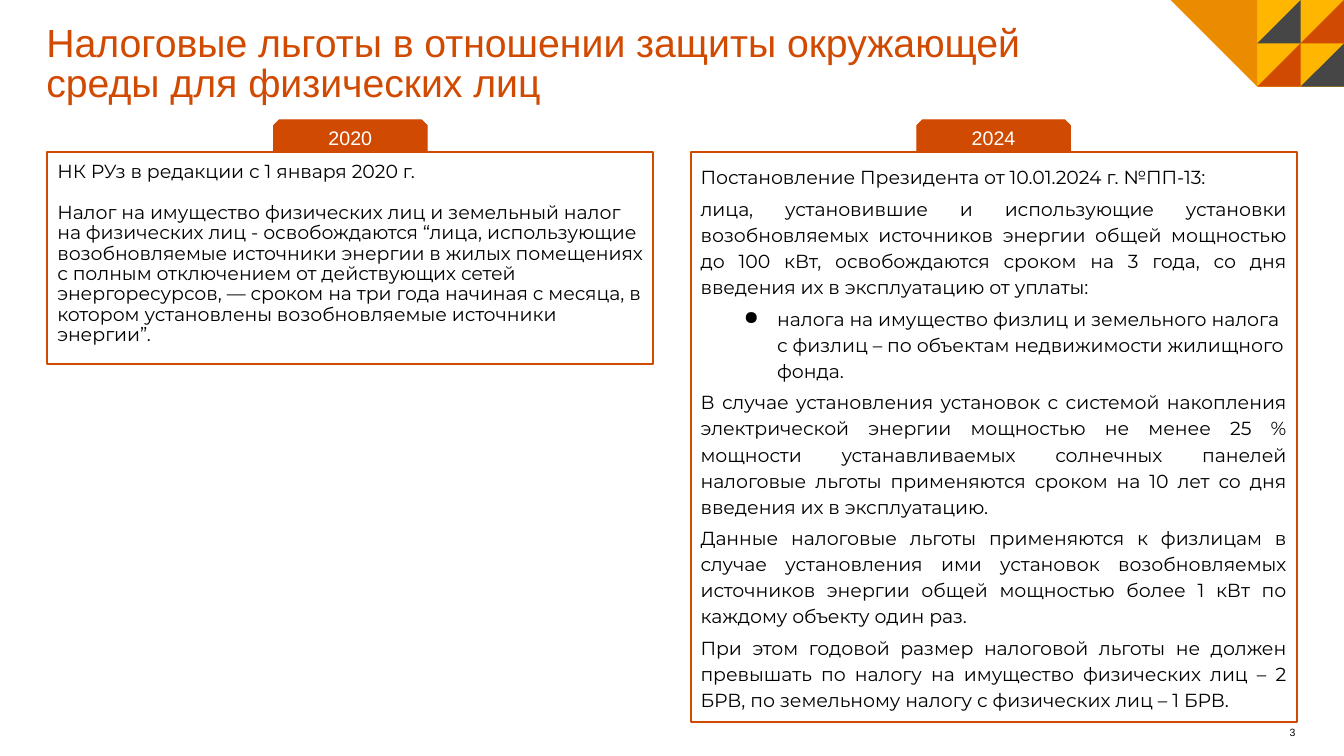
from lxml import etree
from pptx import Presentation
from pptx.dml.color import RGBColor
from pptx.enum import shapes, text
from pptx.oxml.ns import qn
from pptx.util import Inches, Pt

ORANGE = RGBColor(0xD0, 0x4A, 0x02)
AMBER = RGBColor(0xEB, 0x8C, 0x00)
YELLOW = RGBColor(0xFF, 0xB6, 0x00)
GREY = RGBColor(0x46, 0x46, 0x46)
BLACK = RGBColor(0x00, 0x00, 0x00)
WHITE = RGBColor(0xFF, 0xFF, 0xFF)

SLIDE_W = 13.33
CELL = 0.43
BOX_W, BOX_TOP = 6.01, 1.51
TAB_W, TAB_H = 1.52, 0.32

TITLE = "Налоговые льготы в отношении защиты окружающей среды для физических лиц"
RULES_2020 = [
    "НК РУз в редакции с 1 января 2020 г.",
    "Налог на имущество физических лиц и земельный налог на физических лиц - "
    "освобождаются “лица, использующие возобновляемые источники энергии в жилых "
    "помещениях с полным отключением от действующих сетей энергоресурсов, — сроком "
    "на три года начиная с месяца, в котором установлены возобновляемые источники "
    "энергии”.",
]
RULES_2024 = [
    "Постановление Президента от 10.01.2024 г. №ПП-13:",
    "лица, установившие и использующие установки возобновляемых источников энергии "
    "общей мощностью до 100 кВт, освобождаются сроком на 3 года, со дня введения их "
    "в эксплуатацию от уплаты:",
    "налога на имущество физлиц и земельного налога с физлиц – по объектам "
    "недвижимости жилищного фонда.",
    "В случае установления установок с системой накопления электрической энергии "
    "мощностью не менее 25 % мощности устанавливаемых солнечных панелей налоговые "
    "льготы применяются сроком на 10 лет со дня введения их в эксплуатацию.",
    "Данные налоговые льготы применяются к физлицам в случае установления ими "
    "установок возобновляемых источников энергии общей мощностью более 1 кВт по "
    "каждому объекту один раз.",
    "При этом годовой размер налоговой льготы не должен превышать по налогу на "
    "имущество физических лиц – 2 БРВ, по земельному налогу с физических лиц – 1 БРВ.",
]
BULLET_ITEM = 2


def write(sp, lines, size, color, font="Arial", align=text.PP_ALIGN.LEFT,
          anchor=text.MSO_ANCHOR.TOP, inset=0.1, spacing=1.0):
    tf = sp.text_frame
    tf.word_wrap = True
    tf.vertical_anchor = anchor
    tf.margin_left = tf.margin_right = Inches(inset)
    tf.margin_top = tf.margin_bottom = Inches(inset)
    tf.text = "\n".join(lines)
    for p in tf.paragraphs:
        p.alignment = align
        p.line_spacing = spacing
        p.font.size = Pt(size)
        p.font.name = font
        p.font.color.rgb = color
    return tf.paragraphs


def add_text(s, x, y, w, h, line, size, color, **style):
    sp = s.shapes.add_textbox(Inches(x), Inches(y), Inches(w), Inches(h))
    write(sp, [line], size, color, inset=0, **style)


def add_polygon(s, points, color):
    points = [(Inches(x), Inches(y)) for x, y in points]
    fb = s.shapes.build_freeform(*points[0])
    fb.add_line_segments(points[1:], close=True)
    sp = fb.convert_to_shape()
    sp.shadow.inherit = False
    sp.fill.solid()
    sp.fill.fore_color.rgb = color
    sp.line.fill.background()


def add_corner(s):
    mid, left = SLIDE_W - 2 * CELL, SLIDE_W - 4 * CELL
    low = 2 * CELL
    add_polygon(s, [(mid, 0), (SLIDE_W, 0), (SLIDE_W, low), (mid, low)], YELLOW)
    add_polygon(s, [(left, 0), (mid, low), (mid, 0)], AMBER)
    # Lower-right half of each cell, in alternating colours
    for row in range(2):
        for col in range(2):
            x, y = mid + col * CELL, row * CELL
            color = ORANGE if (row + col) % 2 else GREY
            add_polygon(s, [(x, y + CELL), (x + CELL, y + CELL), (x + CELL, y)], color)


def add_outlined(s, kind, x, y, w, h, line_width):
    sp = s.shapes.add_shape(kind, Inches(x), Inches(y), Inches(w), Inches(h))
    sp.shadow.inherit = False
    sp.fill.background()
    sp.line.color.rgb = ORANGE
    sp.line.width = Pt(line_width)
    return sp


def add_panel(s, x, h, year, lines, **style):
    box = add_outlined(s, shapes.MSO_SHAPE.RECTANGLE, x, BOX_TOP, BOX_W, h, 1.5)
    paragraphs = write(box, lines, 13.5, BLACK, font="Montserrat", **style)
    # Year tab on top of the box
    tab = add_outlined(s, shapes.MSO_SHAPE.SNIP_2_SAME_RECTANGLE,
                       x + (BOX_W - TAB_W) / 2, BOX_TOP - TAB_H, TAB_W, TAB_H, 0.75)
    tab.fill.solid()
    tab.fill.fore_color.rgb = ORANGE
    write(tab, [year], 14, WHITE, align=text.PP_ALIGN.CENTER,
          anchor=text.MSO_ANCHOR.MIDDLE)
    return paragraphs


def set_bullet(p):
    p.alignment = text.PP_ALIGN.LEFT
    pPr = p._p.get_or_add_pPr()
    pPr.set("marL", str(Inches(0.76)))
    pPr.set("indent", str(Inches(-0.33)))
    bullet = etree.Element(qn("a:buChar"), char="●")
    pPr.find(qn("a:defRPr")).addprevious(bullet)


def main():
    prs = Presentation()
    prs.slide_width, prs.slide_height = Inches(SLIDE_W), Inches(7.5)
    s = prs.slides.add_slide(prs.slide_layouts[6])

    # Heading, corner pattern and page number
    add_text(s, 0.46, 0.25, 10.47, 1.2, TITLE, 28, ORANGE, spacing=0.85)
    add_corner(s)
    add_text(s, 8.99, 7.18, 3.86, 0.15, "3", 7.5, BLACK,
             align=text.PP_ALIGN.RIGHT, anchor=text.MSO_ANCHOR.BOTTOM)

    # Rules of 2020
    rules = add_panel(s, 0.47, 2.1, "2020", RULES_2020, spacing=0.9)
    rules[1].space_before = Pt(14.6)

    # Rules of 2024
    rules = add_panel(s, 6.85, 5.65, "2024", RULES_2024, spacing=1.15,
                      align=text.PP_ALIGN.JUSTIFY, anchor=text.MSO_ANCHOR.MIDDLE)
    for p in rules:
        p.space_before = Pt(4)
    rules[-1].space_after = Pt(4)
    set_bullet(rules[BULLET_ITEM])

    prs.save("out.pptx")


if __name__ == "__main__":
    main()
